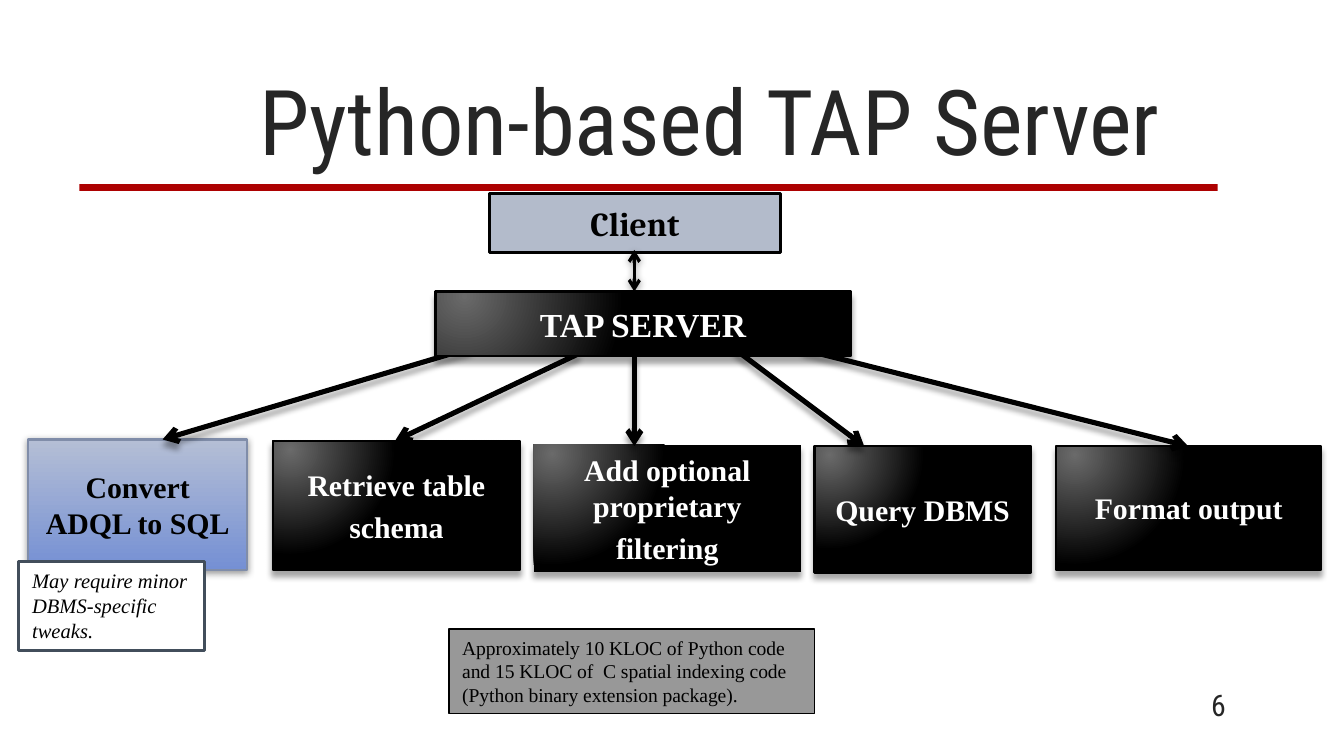
from lxml import etree
from pptx import Presentation, util as u
from pptx.dml.color import RGBColor
from pptx.enum import shapes, text
from pptx.oxml.ns import qn

PX = 9144  # 100 px to the inch
COLORS = {
    "white": "FFFFFF", "black": "000000", "ink": "262626", "red": "AD0101",
    "client": "B3BBCB", "sky": "B4BED5", "blue": "7590D4", "blue_edge": "808DA9",
    "slate": "424E5B", "gray": "989898", "shine": "6A6A6A",
}
SERIF, SANS = "Times New Roman", "Roboto Condensed"
DARK = [(0, "shine"), (76, "black"), (100, "black")]
BLUE = [(0, "sky"), (100, "blue")]
SOFT = (40, 4, 1, 88)  # opacity %, blur pt, distance pt, angle
DEEP = (35, 3, 3, 90)
LEFT, CENTER, RIGHT = text.PP_ALIGN.LEFT, text.PP_ALIGN.CENTER, text.PP_ALIGN.RIGHT
TOP, MIDDLE, BOTTOM = (text.MSO_ANCHOR.TOP, text.MSO_ANCHOR.MIDDLE,
                       text.MSO_ANCHOR.BOTTOM)


def px(*lengths):
    return [u.Emu(n * PX) for n in lengths]


def rgb(name):
    return RGBColor.from_string(COLORS[name])


def sub(parent, tag, **attrs):
    return etree.SubElement(parent, qn(tag), {k: str(v) for k, v in attrs.items()})


def add_color(parent, name):
    return sub(parent, "a:srgbClr", val=COLORS[name])


def set_gradient(sp, stops):
    """Dark stops shine from the top left corner; others run downwards."""
    grad = etree.Element(qn("a:gradFill"), rotWithShape="1")
    gs_list = sub(grad, "a:gsLst")
    for pos, name in stops:
        add_color(sub(gs_list, "a:gs", pos=pos * 1000), name)
    if stops is DARK:
        path = sub(grad, "a:path", path="circle")
        sub(path, "a:fillToRect", l=15000, t=15000, r=100000, b=100000)
    else:
        sub(grad, "a:lin", ang=90 * 60000, scaled=0)
    sp._element.spPr.find(qn("a:prstGeom")).addnext(grad)


def add_shadow(effects, shadow):
    alpha, blur, dist, angle = shadow
    outer = sub(effects, "a:outerShdw", blurRad=blur * 12700, dist=dist * 12700,
                dir=angle * 60000, rotWithShape=0)
    sub(add_color(outer, "black"), "a:alpha", val=alpha * 1000)


def write(sp, lines, size, color, font=SERIF, align=CENTER, anchor=MIDDLE,
          bold=False, italic=False, before=0):
    tf = sp.text_frame
    tf.word_wrap = True
    tf.vertical_anchor = anchor
    tf.text = lines
    for p in tf.paragraphs:
        p.alignment = align
        p.space_before = u.Pt(before)
        for r in p.runs:
            f = r.font
            f.name, f.size, f.bold, f.italic = font, u.Pt(size), bold, italic
            f.color.rgb = rgb(color)


def add_box(s, box, fill, edge=None, weight=1.25, shadow=None):
    """Fill is a colour name or a list of gradient stops."""
    sp = s.shapes.add_shape(shapes.MSO_SHAPE.RECTANGLE, *px(*box))
    sp.shadow.inherit = False
    if isinstance(fill, str):
        sp.fill.solid()
        sp.fill.fore_color.rgb = rgb(fill)
    else:
        set_gradient(sp, fill)
    if edge:
        sp.line.color.rgb = rgb(edge)
        sp.line.width = u.Pt(weight)
    else:
        sp.line.fill.background()
    if shadow:
        add_shadow(sp._element.spPr.find(qn("a:effectLst")), shadow)
    return sp


def add_arrow(s, start, end, weight=2.75, shadow=DEEP, both=False):
    cx = s.shapes.add_connector(shapes.MSO_CONNECTOR.STRAIGHT, *px(*start, *end))
    cx.line.color.rgb = rgb("black")
    cx.line.width = u.Pt(weight)
    ln = cx.line._get_or_add_ln()
    if both:
        sub(ln, "a:headEnd", type="arrow")
    sub(ln, "a:tailEnd", type="arrow")
    add_shadow(sub(cx._element.spPr, "a:effectLst"), shadow)


def add_label(s, box, label, size, **style):
    sp = s.shapes.add_textbox(*px(*box))
    write(sp, label, size, "ink", font=SANS, **style)


def add_header(s, x, y, w):
    add_box(s, (x, y + 134, w, 5), "red")
    add_label(s, (x + 98, y, 742, 131), "Python-based TAP Server", 48.6, anchor=BOTTOM)


def add_diagram(s, x, y):
    """Client over server over the five steps that the server runs."""
    # label, box, fill, edge, shadow, arrow start, arrow end
    steps = [
        ("Convert ADQL to SQL", (0, 183, 163, 97), BLUE, "blue_edge", SOFT,
         (329, 115), (100, 183)),
        ("Retrieve table\nschema", (182, 184, 184, 96), DARK, "black", DEEP,
         (410, 119), (273, 184)),
        ("Add optional proprietary\nfiltering", (376, 187, 199, 95), DARK, None, DEEP,
         (451, 120), (451, 188)),
        ("Query DBMS", (585, 188, 161, 94), DARK, "black", DEEP,
         (526, 116), (622, 188)),
        ("Format output", (765, 188, 197, 92), DARK, "black", DEEP,
         (576, 116), (863, 188)),
    ]
    for label, (left, top, w, h), fill, edge, shadow, start, end in steps:
        sp = add_box(s, (x + left, y + top, w, h), fill, edge, shadow=shadow)
        write(sp, label, 16, "white" if fill is DARK else "black", bold=True, before=3.2)
        add_arrow(s, (x + start[0], y + start[1]), (x + end[0], y + end[1]))

    client = add_box(s, (x + 343, y, 217, 44), "client", "black", 1.75)
    write(client, "Client", 18, "black", font="Cambria", bold=True)
    add_arrow(s, (x + 451, y + 42), (x + 451, y + 73), 1.75, SOFT, both=True)
    server = add_box(s, (x + 303, y + 73, 309, 48), DARK, "black", shadow=DEEP)
    write(server, "TAP SERVER", 18, "white", bold=True)


def add_note(s, box, note, size, fill, edge, weight, italic=False):
    sp = add_box(s, box, fill, edge, weight)
    write(sp, note, size, "black", align=LEFT, anchor=TOP, italic=italic)


def main():
    prs = Presentation()
    prs.slide_width = u.Emu(1000 * PX)
    prs.slide_height = u.Emu(prs.slide_width * 9 // 16)
    s = prs.slides.add_slide(prs.slide_layouts[6])
    add_header(s, 59, 3, 847)
    add_label(s, (839, 509, 83, 30), "6", 16, align=RIGHT)
    add_diagram(s, 21, 144)
    add_note(s, (14, 418, 138, 66), "May require minor DBMS-specific tweaks.",
             11, "white", "slate", 1.75, italic=True)
    add_note(s, (334, 468, 272, 63),
             "Approximately 10 KLOC of Python code and 15 KLOC of  C spatial "
             "indexing code (Python binary extension package).",
             10.5, "gray", "black", 0.75)
    prs.save("out.pptx")


if __name__ == "__main__":
    main()
